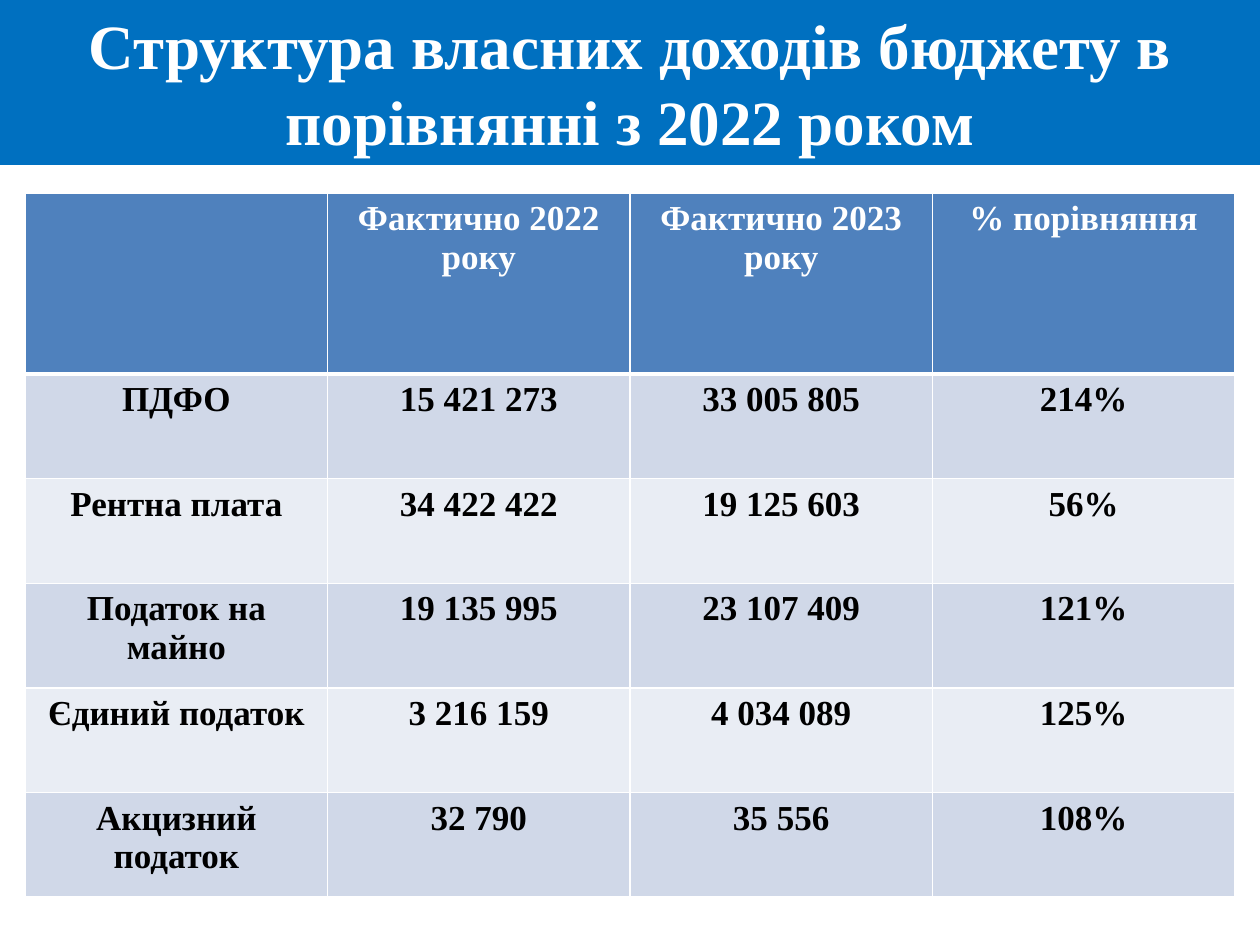
from lxml import etree
from pptx import Presentation
from pptx.dml.color import RGBColor
from pptx.enum.text import MSO_ANCHOR, MSO_AUTO_SIZE, PP_ALIGN
from pptx.oxml.ns import qn
from pptx.util import Inches, Pt

CENTER = PP_ALIGN.CENTER
MIDDLE = MSO_ANCHOR.MIDDLE
NO_AUTOFIT = MSO_AUTO_SIZE.NONE

COLORS = {
    "banner": "0070C0",
    "header": "4F81BD",
    "odd": "D0D8E8",
    "even": "E9EDF4",
    "white": "FFFFFF",
    "black": "000000",
}
ROWS = [
    ("", "Фактично 2022 року", "Фактично 2023 року", "% порівняння"),
    ("ПДФО", "15 421 273", "33 005 805", "214%"),
    ("Рентна плата", "34 422 422", "19 125 603", "56%"),
    ("Податок на майно", "19 135 995", "23 107 409", "121%"),
    ("Єдиний податок", "3 216 159", "4 034 089", "125%"),
    ("Акцизний податок", "32 790", "35 556", "108%"),
]


def write_text(text_frame, text, size, color):
    paragraph = text_frame.paragraphs[0]
    paragraph.alignment = CENTER
    if not text:
        return
    run = paragraph.add_run()
    run.text = text
    formats = {"name": "Times New Roman", "size": Pt(size), "bold": True}
    for attribute, value in formats.items():
        setattr(run.font, attribute, value)
    run.font.color.rgb = RGBColor.from_string(COLORS[color])


def fill_cell(cell, color, widths):
    properties = cell._tc.get_or_add_tcPr()
    for side, width in widths.items():
        line = etree.SubElement(properties, qn(f"a:ln{side}"), w=str(Pt(width)))
        solid = etree.SubElement(line, qn("a:solidFill"))
        etree.SubElement(solid, qn("a:srgbClr"), val=COLORS["white"])
    cell.fill.solid()
    cell.fill.fore_color.rgb = RGBColor.from_string(COLORS[color])


presentation = Presentation()
presentation.slide_width = Inches(10)
presentation.slide_height = Inches(7.5)
slide = presentation.slides.add_slide(presentation.slide_layouts[5])

# Title banner across the top
title = slide.shapes.title
title.left, title.top = 0, 0
title.width, title.height = presentation.slide_width, Inches(1.31)
title.fill.solid()
title.fill.fore_color.rgb = RGBColor.from_string(COLORS["banner"])
frame_formats = {"word_wrap": True, "auto_size": NO_AUTOFIT, "vertical_anchor": MIDDLE}
for attribute, value in frame_formats.items():
    setattr(title.text_frame, attribute, value)
write_text(title.text_frame, "Структура власних доходів бюджету в порівнянні з 2022 роком", 36, "white")

# Revenue table: four equal columns, a tall header and equal body rows
table_width, header_height, body_height = 9.6, 1.44, 0.83
table_height = header_height + body_height * (len(ROWS) - 1)
table = slide.shapes.add_table(
    len(ROWS), len(ROWS[0]),
    Inches(0.2), Inches(1.53), Inches(table_width), Inches(table_height),
).table
for column in table.columns:
    column.width = Inches(table_width / len(ROWS[0]))

for row_index, values in enumerate(ROWS):
    is_header = row_index == 0
    table.rows[row_index].height = Inches(header_height if is_header else body_height)
    fill = "header" if is_header else "odd" if row_index % 2 else "even"
    widths = {"L": 1, "R": 1, "T": 3 if row_index == 1 else 1, "B": 3 if is_header else 1}
    for column_index, value in enumerate(values):
        cell = table.cell(row_index, column_index)
        fill_cell(cell, fill, widths)
        write_text(cell.text_frame, value, 20, "white" if is_header else "black")

presentation.save("out.pptx")
